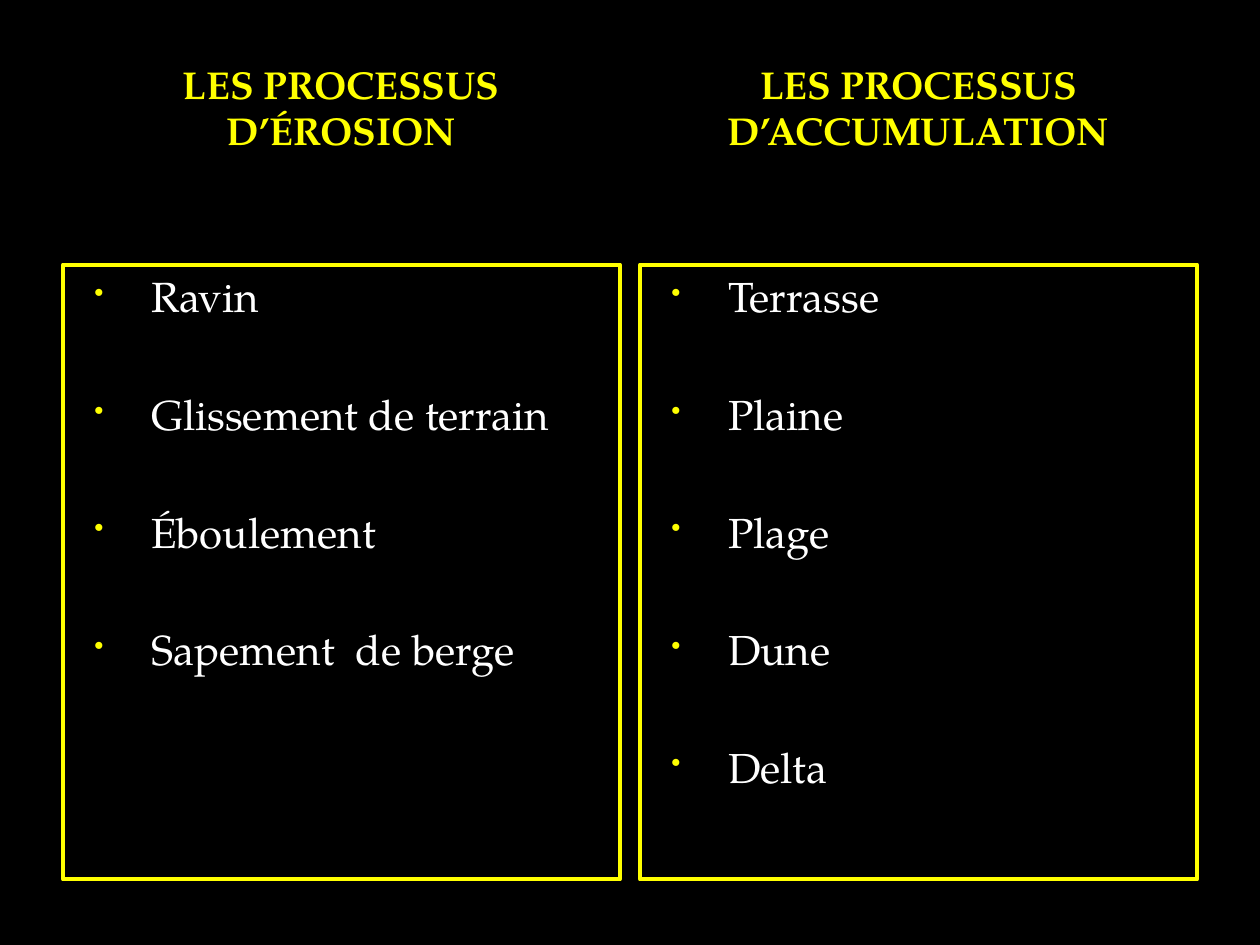
from lxml import etree
from pptx import Presentation
from pptx import util as u
from pptx.dml.color import RGBColor
from pptx.enum import shapes, text
from pptx.oxml.ns import qn

BLACK, YELLOW, WHITE = "000000", "FFFF00", "FFFFFF"
COLUMNS = [
    ("LES PROCESSUS D’ÉROSION",
     ["Ravin", "Glissement de terrain", "Éboulement", "Sapement  de berge"]),
    ("LES PROCESSUS D’ACCUMULATION",
     ["Terrasse", "Plaine", "Plage", "Dune", "Delta"]),
]
LEFT, WIDTH, GAP = 0.5, 4.42, 0.16


def color(value):
    return RGBColor.from_string(value)


def write(p, content, size=24, fill=WHITE, bold=False, font="TeX Gyre Pagella",
          align=text.PP_ALIGN.LEFT, before=0):
    p.alignment = align
    p.space_before = u.Pt(before)
    r = p.add_run()
    r.text = content
    r.font.name = font
    r.font.size = u.Pt(size)
    r.font.bold = bold
    r.font.color.rgb = color(fill)


def add_bullet(p, fill):
    pPr = p._p.get_or_add_pPr()
    pPr.set("marL", str(u.Inches(0.6)))
    pPr.set("indent", str(u.Inches(-0.45)))
    clr = etree.SubElement(pPr, qn("a:buClr"))
    etree.SubElement(clr, qn("a:srgbClr"), val=fill)
    etree.SubElement(pPr, qn("a:buSzPct"), val="65000")
    etree.SubElement(pPr, qn("a:buChar"), char="•")


class Deck:
    """Holds the slide and the style shared by its headings and lists."""

    def __init__(self, prs, back=BLACK, accent=YELLOW):
        self.s = prs.slides.add_slide(prs.slide_layouts[6])
        self.accent = accent
        self.s.background.fill.solid()
        self.s.background.fill.fore_color.rgb = color(back)

    def heading(self, content, *box):
        tf = self.s.shapes.add_textbox(*map(u.Inches, box)).text_frame
        tf.word_wrap = True
        tf.vertical_anchor = text.MSO_ANCHOR.MIDDLE
        write(tf.paragraphs[0], content, size=22.2, fill=self.accent, bold=True,
              align=text.PP_ALIGN.CENTER)

    def bullet_box(self, items, *box):
        sp = self.s.shapes.add_shape(shapes.MSO_SHAPE.RECTANGLE, *map(u.Inches, box))
        sp.shadow.inherit = False
        sp.fill.background()
        sp.line.color.rgb = color(self.accent)
        sp.line.width = u.Pt(2.25)
        tf = sp.text_frame
        tf.word_wrap = True
        tf.vertical_anchor = text.MSO_ANCHOR.TOP
        for i, item in enumerate(items):
            p = tf.add_paragraph() if i else tf.paragraphs[0]
            write(p, item, before=38.4 if i else 0)
            add_bullet(p, self.accent)


def main():
    prs = Presentation()
    prs.slide_width, prs.slide_height = u.Inches(10), u.Inches(7.5)
    deck = Deck(prs)
    for i, (title, items) in enumerate(COLUMNS):
        x = LEFT + i * (WIDTH + GAP)
        deck.heading(title, x, 0.44, WIDTH, 0.82)
        deck.bullet_box(items, x, 2.1, WIDTH, 4.88)
    prs.save("out.pptx")


if __name__ == "__main__":
    main()
